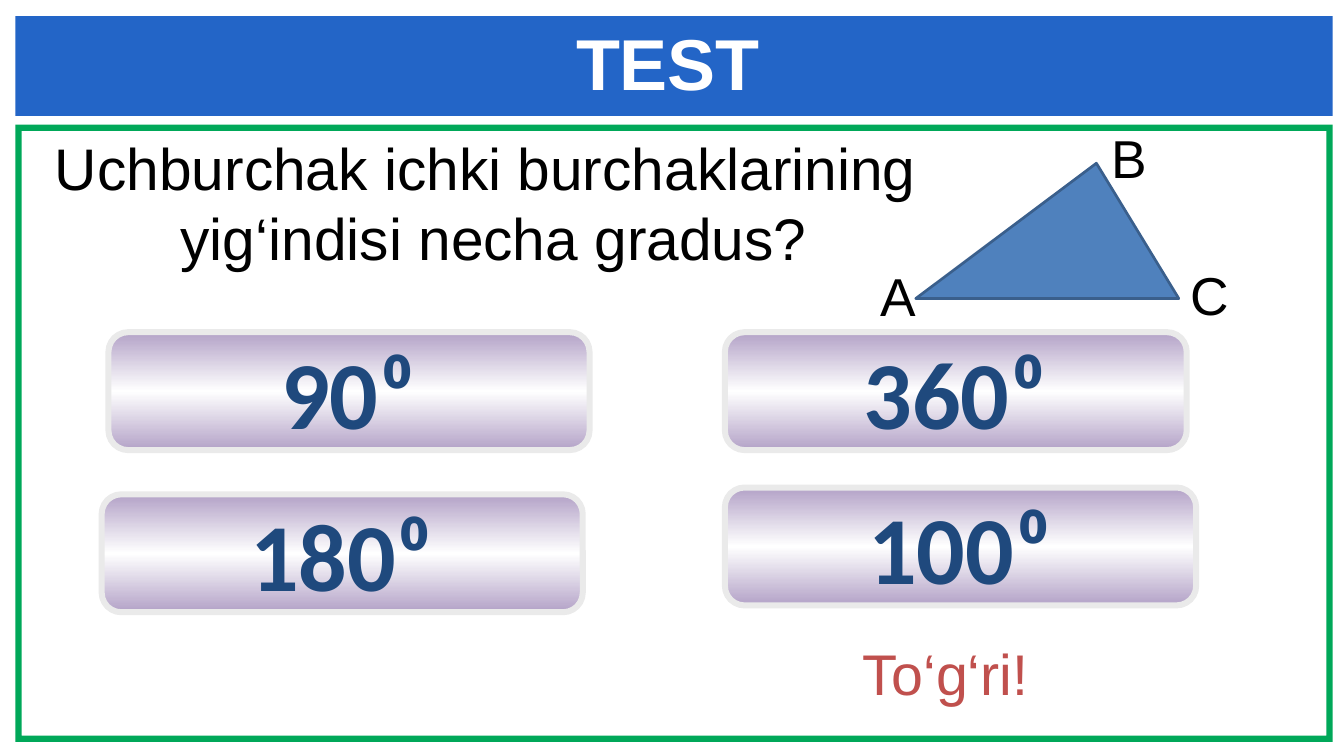
from copy import deepcopy

from pptx import Presentation
from pptx import util as u
from pptx.dml.color import RGBColor
from pptx.enum import shapes, text
from pptx.oxml.ns import qn

COLORS = {
    "bar": "2365C7",
    "frame": "00A859",
    "white": "FFFFFF",
    "black": "000000",
    "lilac": "B3A2C7",
    "button_line": "EAEAEA",
    "navy": "1F497D",
    "red": "C0504D",
    "triangle": "4F81BD",
    "triangle_line": "3A5F8C",
}


def color(name):
    return RGBColor.from_string(COLORS[name])


def write_text(shape, content, size, ink="black", font="Arial", bold=False,
               align="CENTER", anchor="TOP", wrap=True, margins=(0.3, 0.15)):
    """Fill a shape with text, one paragraph per line; margins are in cm."""
    frame = shape.text_frame
    frame.text = content
    frame.word_wrap = wrap
    frame.auto_size = text.MSO_AUTO_SIZE.NONE
    frame.vertical_anchor = text.MSO_ANCHOR[anchor]
    frame.margin_left = frame.margin_right = u.Cm(margins[0])
    frame.margin_top = frame.margin_bottom = u.Cm(margins[1])
    for paragraph in frame.paragraphs:
        paragraph.alignment = text.PP_ALIGN[align]
        for run in paragraph.runs:
            run.font.name = font
            run.font.size = u.Pt(size)
            run.font.bold = bold
            run.font.color.rgb = color(ink)


class QuizSlide:
    def __init__(self, presentation):
        self.slide = presentation.slides.add_slide(presentation.slide_layouts[5])
        self.shapes = self.slide.shapes

    def style(self, shape, fill=None, line=None, width=1):
        shape.shadow.inherit = False
        if fill:
            shape.fill.solid()
            shape.fill.fore_color.rgb = color(fill)
        if line:
            shape.line.color.rgb = color(line)
            shape.line.width = u.Pt(width)
        else:
            shape.line.fill.background()

    def panel(self, kind, box, fill):
        shape = self.shapes.add_shape(kind, *map(u.Cm, box))
        self.style(shape, fill)
        return shape

    def title(self, content, box):
        title = self.shapes.title
        title.left, title.top, title.width, title.height = map(u.Cm, box)
        write_text(title, content, 54, ink="white", bold=True, margins=(0, 0))
        # Bring the title in front of its bar.
        self.shapes._spTree.append(title._element)

    def text_box(self, content, box, size, **options):
        write_text(self.shapes.add_textbox(*map(u.Cm, box)), content, size, **options)

    def button(self, content, left, top, width):
        button = self.shapes.add_shape(
            shapes.MSO_SHAPE.ROUNDED_RECTANGLE, *map(u.Cm, (left, top, width, 3.12)))
        self.style(button, line="button_line", width=4.5)
        button.fill.gradient()
        button.fill.gradient_angle = 90
        stop_list = button._element.spPr.find(qn("a:gradFill")).find(qn("a:gsLst"))
        stop_list.append(deepcopy(stop_list[-1]))
        for index, name in enumerate(("lilac", "white", "lilac")):
            stop = button.fill.gradient_stops[index]
            stop.position = index / 2
            stop.color.rgb = color(name)
        write_text(button, content, 72, ink="navy", font="Calibri", bold=True,
                   anchor="MIDDLE", wrap=False)

    def polygon(self, points, fill, line, width):
        start, *others = [tuple(map(u.Cm, point)) for point in points]
        builder = self.shapes.build_freeform(*start)
        builder.add_line_segments(others, close=True)
        self.style(builder.convert_to_shape(), fill, line, width)


def main():
    presentation = Presentation()
    presentation.slide_width = u.Cm(35.56)
    presentation.slide_height = round(presentation.slide_width * 9 / 16)

    quiz = QuizSlide(presentation)
    frame = quiz.panel(shapes.MSO_SHAPE.FRAME, (0.41, 3.3, 34.85, 16.33), "frame")
    frame.adjustments[0] = 0.01
    quiz.panel(shapes.MSO_SHAPE.RECTANGLE, (0.41, 0.43, 34.85, 2.64), "bar")
    quiz.title("TEST", (1.37, 0.5, 32.61, 2.41))

    quiz.text_box("Uchburchak ichki burchaklarining\n yig‘indisi necha gradus?",
                  (0.41, 3.33, 24.89, 4.06), 44)
    for answer in (("90⁰", 2.87, 8.79, 12.73), ("360⁰", 19.18, 8.79, 12.22),
                   ("180⁰", 2.69, 13.08, 12.73), ("100⁰", 19.18, 12.9, 12.47)):
        quiz.button(*answer)
    quiz.text_box("To‘g‘ri!", (21.16, 16.74, 7.72, 1.96), 43, ink="red", wrap=False)

    quiz.polygon([(24.23, 7.9), (29.01, 4.32), (31.19, 7.9)],
                 "triangle", "triangle_line", 2)
    for vertex, left, top in (("A", 23.04, 6.83), ("B", 29.16, 3.18), ("C", 31.24, 6.81)):
        quiz.text_box(vertex, (left, top, 1.4, 1.96), 40, align="LEFT",
                      margins=(0.25, 0.13))

    presentation.save("out.pptx")


if __name__ == "__main__":
    main()
